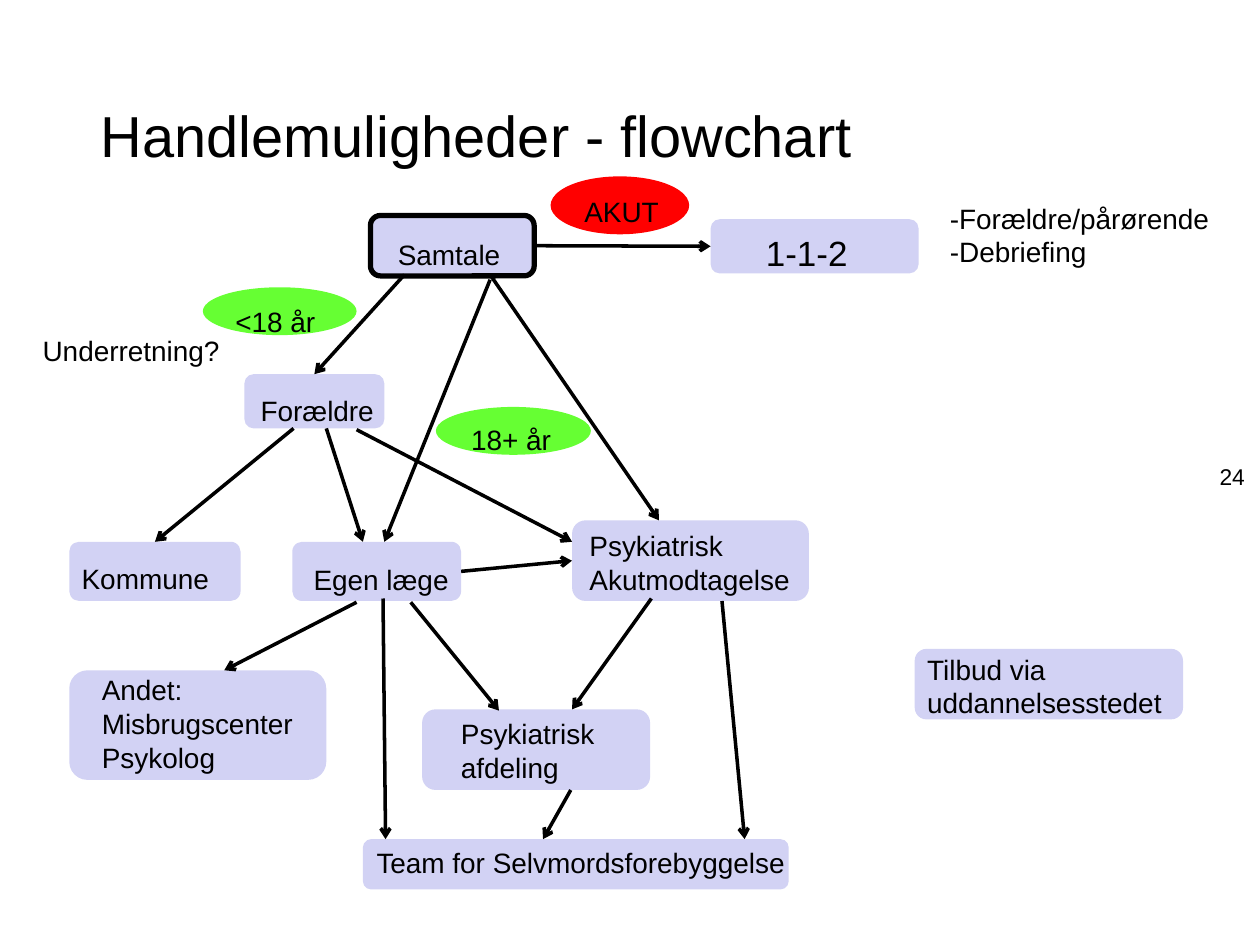
from pptx import Presentation, util as u
from pptx.dml.color import RGBColor
from pptx.enum import shapes, text
from pptx.oxml.ns import qn
from lxml import etree

BLACK, LILAC, GREEN, RED = "000000", "D2D2F4", "66FF33", "FF0000"
ROUND, OVAL = shapes.MSO_SHAPE.ROUNDED_RECTANGLE, shapes.MSO_SHAPE.OVAL
BOTTOM, TOP = text.MSO_ANCHOR.BOTTOM, text.MSO_ANCHOR.TOP
TALL = 34.6  # exact line spacing of one-line labels, in points

# name: (box, label offset and size, label lines, label options)
STEPS = {
    "offer": ((7.26, 5.15, 2.13, 0.56), (0, -0.03, 2.12, 0.64),
              ["Tilbud via uddannelsesstedet"], {}),
    "emergency": ((5.64, 1.74, 1.65, 0.43), (0.34, -0.09, 0.94, 0.57),
                  ["1-1-2"], {"leading": TALL, "size": 20}),
    "team": ((2.88, 6.66, 3.38, 0.4), (0.01, 0, 3.54, 0.37),
             ["Team for Selvmordsforebyggelse"], {"anchor": TOP}),
    "ward": ((3.35, 5.63, 1.81, 0.64), (0.21, 0.01, 1.29, 0.63),
             ["Psykiatrisk afdeling"], {}),
    "other": ((0.55, 5.32, 2.04, 0.87), (0.16, 0, 1.76, 0.87),
              ["Andet:", "Misbrugscenter", "Psykolog"], {}),
    "municipality": ((0.55, 4.3, 1.36, 0.47), (0, 0.15, 1.36, 0.32),
                     ["Kommune"], {"leading": TALL}),
    "doctor": ((2.32, 4.3, 1.34, 0.47), (0.07, -0.09, 1.28, 0.57),
               ["Egen læge"], {"leading": TALL}),
    "intake": ((4.54, 4.13, 1.88, 0.64), (0.04, 0.08, 1.85, 0.57),
               ["Psykiatrisk Akutmodtagelse"], {}),
    "parents": ((1.94, 2.97, 1.11, 0.43), (0.03, -0.1, 1.24, 0.57),
                ["Forældre"], {"leading": TALL}),
    "talk": ((2.94, 1.71, 1.3, 0.48), (0.12, -0.16, 1.06, 0.65),
             ["Samtale"], {"leading": TALL}),
}

CONDITIONS = [
    ((1.61, 2.28, 1.22, 0.38), GREEN, (0.16, 0.06, 0.86, 0.39), "<18 år"),
    ((3.46, 3.23, 1.23, 0.38), GREEN, (0.18, -0.06, 0.86, 0.5), "18+ år"),
    ((4.37, 1.4, 1.1, 0.46), RED, (0.17, 0.01, 0.94, 0.45), "AKUT"),
]

# start, end, then the (step, side) each end is joined to, if any
ARROWS = [
    ((3.21, 2.18), (2.5, 2.97), None, ("parents", 0)),
    ((2.33, 3.4), (1.22, 4.3), None, ("municipality", 0)),
    ((2.59, 3.4), (2.88, 4.3), None, None),
    ((3.26, 4.78), (3.96, 5.64), None, None),
    ((2.83, 4.78), (1.78, 5.32), None, None),
    ((2.83, 3.41), (4.54, 4.3), None, None),
    ((3.89, 2.22), (3.05, 4.3), None, None),
    ((5.73, 4.77), (5.91, 6.66), None, None),
    ((5.17, 4.75), (4.54, 5.63), None, None),
    ((4.53, 6.27), (4.31, 6.66), None, None),
    ((4.23, 1.94), (5.63, 1.94), ("talk", 3), ("emergency", 1)),
    ((3.65, 4.54), (4.54, 4.45), ("doctor", 3), ("intake", 1)),
    ((3.89, 2.18), (5.23, 4.13), None, None),
    ((3.04, 4.75), (3.06, 6.66), None, None),
]


def rgb(value):
    return RGBColor.from_string(value)


def inches(values):
    return [u.Inches(v) for v in values]


def write(tf, lines, size=16, leading=None, anchor=BOTTOM,
          align=text.PP_ALIGN.LEFT):
    tf.word_wrap = True
    tf.auto_size = text.MSO_AUTO_SIZE.NONE
    tf.vertical_anchor = anchor
    tf.margin_left = tf.margin_right = u.Inches(0.1)
    tf.margin_top = tf.margin_bottom = u.Inches(0.05)
    tf.text = "\n".join(lines)
    for p in tf.paragraphs:
        p.alignment = align
        p.space_before = u.Pt(0)
        p.line_spacing = u.Pt(leading) if leading else 1.0
        for r in p.runs:
            r.font.name = "Arial"
            r.font.size = u.Pt(size)
            r.font.color.rgb = rgb(BLACK)


def add_label(slide, box, lines, **options):
    tb = slide.shapes.add_textbox(*inches(box))
    write(tb.text_frame, lines, **options)


def add_node(slide, kind, box, fill, label, lines, **options):
    """Draw a filled shape and a label placed relative to its corner."""
    sp = slide.shapes.add_shape(kind, *inches(box))
    sp.shadow.inherit = False
    sp.fill.solid()
    sp.fill.fore_color.rgb = rgb(fill)
    sp.line.fill.background()
    dx, dy, width, height = label
    add_label(slide, (box[0] + dx, box[1] + dy, width, height), lines, **options)
    return sp


def add_arrow(slide, steps, start, end, source, target):
    cn = slide.shapes.add_connector(
        shapes.MSO_CONNECTOR.STRAIGHT, *inches(start + end))
    if source:
        cn.begin_connect(steps[source[0]], source[1])
    if target:
        cn.end_connect(steps[target[0]], target[1])
    cn.line.color.rgb = rgb(BLACK)
    cn.line.width = u.Pt(2)
    etree.SubElement(cn.line._get_or_add_ln(), qn("a:tailEnd"), type="arrow")
    etree.SubElement(cn._element.spPr, qn("a:effectLst"))


def add_title(slide, box):
    title = slide.shapes.title
    title.left, title.top, title.width, title.height = inches(box)
    write(title.text_frame, ["Handlemuligheder - flowchart"], size=33, leading=TALL)


def add_flowchart(slide):
    steps = {name: add_node(slide, ROUND, box, LILAC, label, lines, **options)
             for name, (box, label, lines, options) in STEPS.items()}
    steps["talk"].line.color.rgb = rgb(BLACK)
    steps["talk"].line.width = u.Pt(3)
    for box, fill, label, words in CONDITIONS:
        add_node(slide, OVAL, box, fill, label, [words], leading=TALL)
    for arrow in ARROWS:
        add_arrow(slide, steps, *arrow)


def main():
    prs = Presentation()
    prs.slide_width, prs.slide_height = u.Inches(10), u.Inches(7.5)
    slide = prs.slides.add_slide(prs.slide_layouts[5])
    add_title(slide, (0.7, 0.76, 8.44, 0.63))
    add_flowchart(slide)
    add_label(slide, (7.44, 1.55, 2.28, 0.63), ["-Forældre/pårørende", "-Debriefing"])
    add_label(slide, (0.24, 2.49, 1.7, 0.47), ["Underretning?"], leading=TALL)
    add_label(slide, (9.51, 3.62, 0.54, 0.52), ["24"], size=13, anchor=TOP,
              align=text.PP_ALIGN.CENTER)
    prs.save("out.pptx")


if __name__ == "__main__":
    main()
